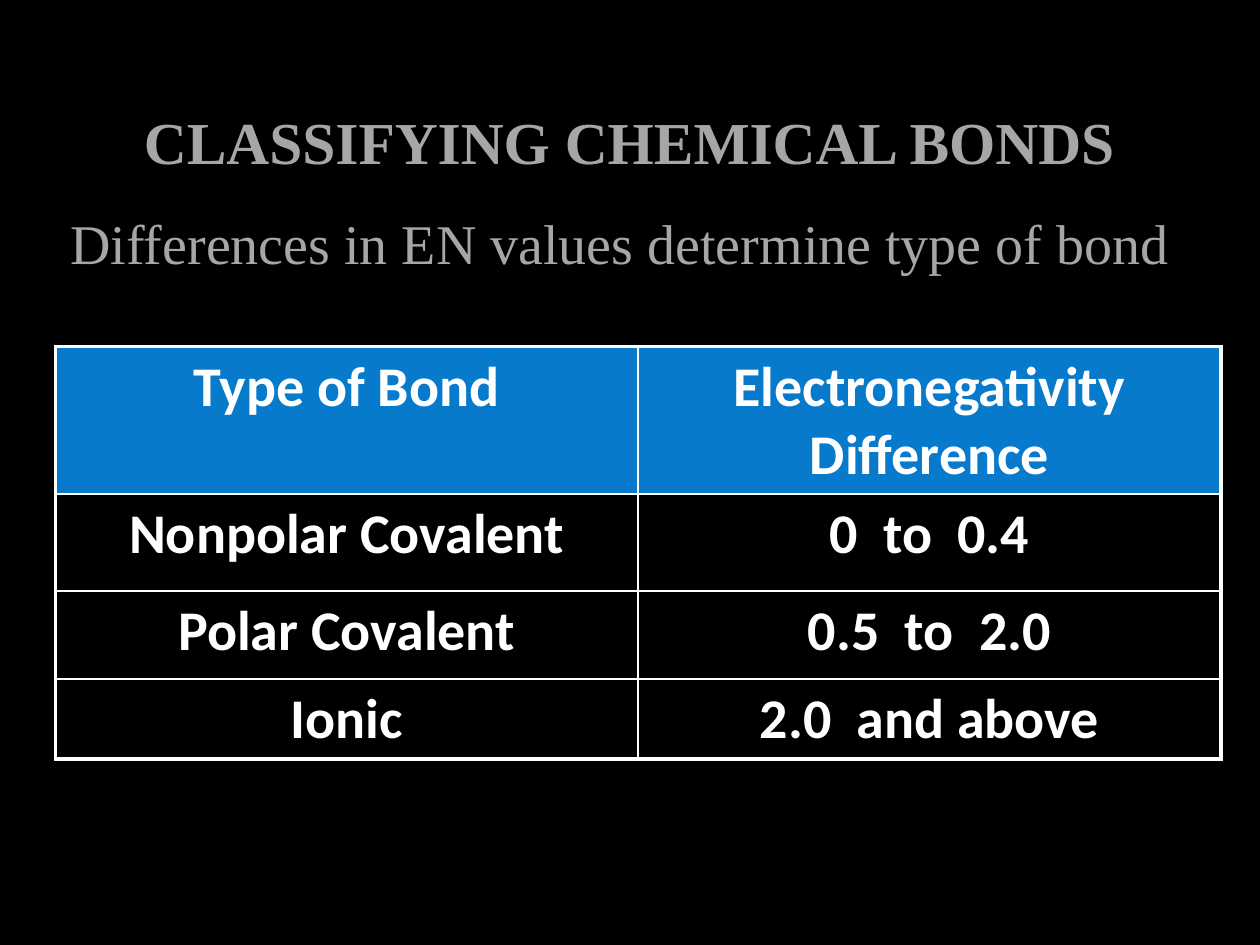
from lxml import etree
from pptx import Presentation
from pptx import util as u
from pptx.dml.color import RGBColor
from pptx.enum import text
from pptx.oxml.ns import qn

COLORS = {"black": "000000", "grey": "A6A6A6", "white": "FFFFFF", "blue": "077ACC"}
SERIF, SANS = "Times New Roman", "Calibri"

deck = Presentation()
deck.slide_width, deck.slide_height = u.Inches(10), u.Inches(7.5)
page = deck.slides.add_slide(deck.slide_layouts[6])
page.background.fill.solid()
page.background.fill.fore_color.rgb = RGBColor.from_string(COLORS["black"])


def add_span(para, words, size, font, color, bold):
    span = para.add_run()
    span.text = words
    span.font.size = u.Pt(size)
    span.font.name = font
    span.font.bold = bold
    span.font.color.rgb = RGBColor.from_string(COLORS[color])


def add_border(cell, side, points):
    props = cell._tc.get_or_add_tcPr()
    line = etree.SubElement(props, qn(f"a:ln{side}"), w=str(u.Pt(points)))
    fill = etree.SubElement(line, qn("a:solidFill"))
    etree.SubElement(fill, qn("a:srgbClr"), val=COLORS["white"])


# Title and subtitle
center, left = text.PP_ALIGN.CENTER, text.PP_ALIGN.LEFT
middle, top = text.MSO_ANCHOR.MIDDLE, text.MSO_ANCHOR.TOP
headings = [
    ("CLASSIFYING CHEMICAL BONDS", (0.75, 0.43, 8.49, 1.45), 34, True, center, middle, 0.9, 0),
    ("Differences in EN values determine type of bond", (0.46, 1.5, 9.08, 1.08),
     32, False, left, top, 1.2, 10),
]
for words, place, size, bold, align, anchor, spacing, before in headings:
    box = page.shapes.add_textbox(*map(u.Inches, place))
    box.text_frame.word_wrap = True
    box.text_frame.vertical_anchor = anchor
    para = box.text_frame.paragraphs[0]
    para.alignment = align
    para.line_spacing = spacing
    para.space_before = u.Pt(before)
    add_span(para, words, size, SERIF, "grey", bold)

# Table of bond types
rows = [
    ("Type of Bond", "Electronegativity Difference"),
    ("Nonpolar Covalent", "0  to  0.4"),
    ("Polar Covalent", "0.5  to  2.0"),
    ("Ionic", "2.0  and above"),
]
heights = [1.17, 0.77, 0.7, 0.63]
width = 9.25
frame = page.shapes.add_table(len(rows), 2, *map(u.Inches, (0.44, 2.75, width, sum(heights))))
table = frame.table
table.first_row = table.horz_banding = False
for column in table.columns:
    column.width = u.Inches(width / 2)

last = len(rows) - 1
for r, (height, row) in enumerate(zip(heights, rows)):
    table.rows[r].height = u.Inches(height)
    for c, words in enumerate(row):
        cell = table.cell(r, c)
        # Outer edges are heavier than inner ones
        outer = {"L": c == 0, "R": c == 1, "T": r == 0, "B": r == last}
        for side, heavy in outer.items():
            add_border(cell, side, 2.25 if heavy else 1)
        if r == 0:
            cell.fill.solid()
            cell.fill.fore_color.rgb = RGBColor.from_string(COLORS["blue"])
        else:
            cell.fill.background()
        para = cell.text_frame.paragraphs[0]
        para.alignment = center
        before = etree.SubElement(para._p.get_or_add_pPr(), qn("a:spcBef"))
        etree.SubElement(before, qn("a:spcPct"), val="20000")
        add_span(para, words, 32, SANS, "white", True)

deck.save("out.pptx")
